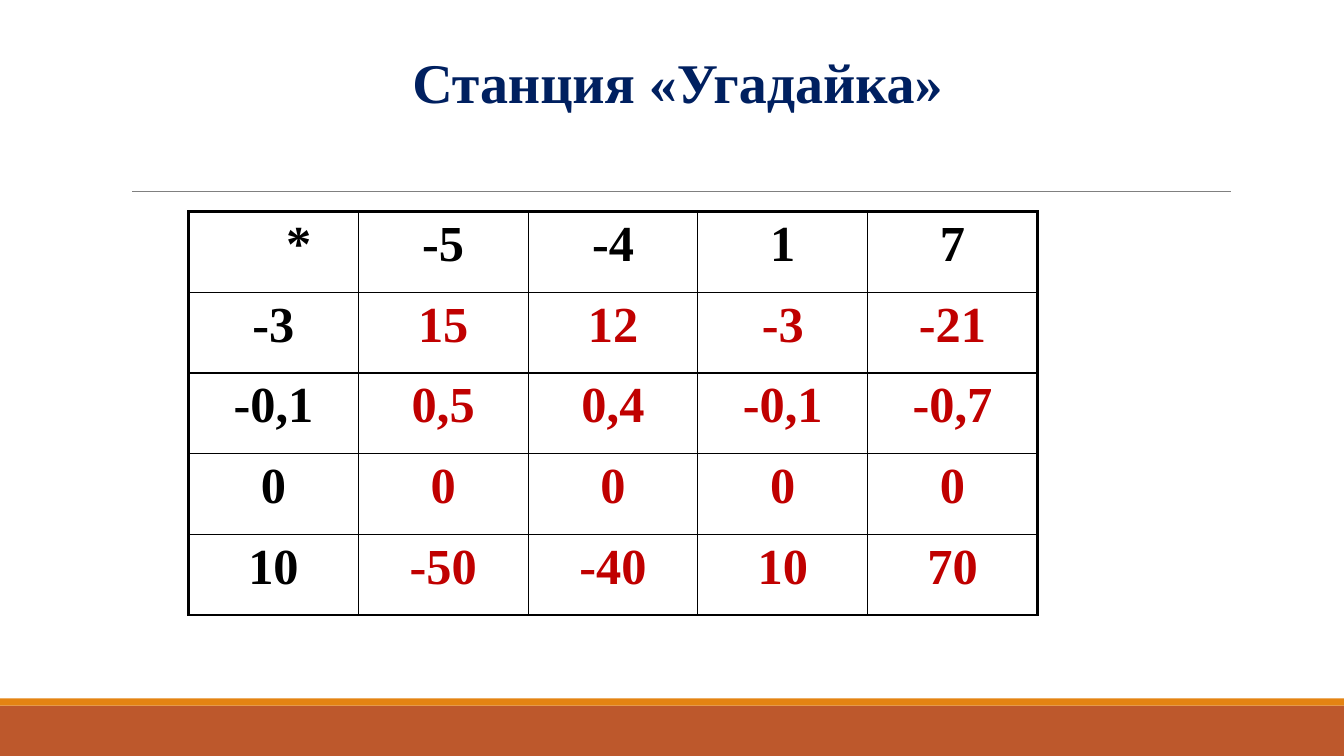
from lxml import etree
from pptx import Presentation
from pptx.dml.color import RGBColor
from pptx.enum.shapes import MSO_CONNECTOR, MSO_SHAPE
from pptx.enum.text import MSO_ANCHOR, MSO_AUTO_SIZE, PP_ALIGN
from pptx.oxml.ns import qn
from pptx.util import Pt

PX = 9144  # EMU per px, 100 px to the inch
SLIDE_WIDTH, SLIDE_HEIGHT = 1333, 750

RECTANGLE = MSO_SHAPE.RECTANGLE
STRAIGHT = MSO_CONNECTOR.STRAIGHT
CENTER = PP_ALIGN.CENTER
TOP = MSO_ANCHOR.TOP
NO_AUTO_SIZE = MSO_AUTO_SIZE.NONE

RUST = RGBColor(0xBD, 0x58, 0x2C)
ORANGE = RGBColor(0xE4, 0x83, 0x12)
GRAY = RGBColor(0x80, 0x80, 0x80)
NAVY = RGBColor(0x00, 0x20, 0x60)
BLACK = RGBColor(0x00, 0x00, 0x00)
RED = RGBColor(0xC0, 0x00, 0x00)

FONT = "Times New Roman"
INNER_BORDER, OUTER_BORDER = Pt(1), Pt(2.25)
STAR_INDENT = 50

PRODUCTS = [
    ["*", "-5", "-4", "1", "7"],
    ["-3", "15", "12", "-3", "-21"],
    ["-0,1", "0,5", "0,4", "-0,1", "-0,7"],
    ["0", "0", "0", "0", "0"],
    ["10", "-50", "-40", "10", "70"],
]


def px(*lengths):
    return [length * PX for length in lengths]


def write_centered(text_frame, text, size, color):
    text_frame.text = text
    paragraph = text_frame.paragraphs[0]
    paragraph.alignment = CENTER
    font = paragraph.runs[0].font
    font.name, font.size, font.bold = FONT, Pt(size), True
    font.color.rgb = color


def add_bar(slide, left, top, width, height, color):
    bar = slide.shapes.add_shape(RECTANGLE, *px(left, top, width, height))
    bar.shadow.inherit = False
    bar.fill.solid()
    bar.fill.fore_color.rgb = color
    bar.line.fill.background()


def add_footer(slide, left, top, width, height):
    stripe = 7
    add_bar(slide, left, top + stripe, width, height - stripe, RUST)
    add_bar(slide, left, top, width, stripe, ORANGE)


def add_rule(slide, left, top, width):
    rule = slide.shapes.add_connector(STRAIGHT, *px(left, top, left + width, top))
    rule.line.color.rgb = GRAY
    rule.line.width = Pt(0.5)
    etree.SubElement(rule._element.spPr, qn("a:effectLst"))


def add_title(slide, left, top, width, height):
    title = slide.shapes.title
    title.left, title.top, title.width, title.height = px(left, top, width, height)
    text_frame = title.text_frame
    text_frame.word_wrap = True
    text_frame.auto_size = NO_AUTO_SIZE
    text_frame.vertical_anchor = TOP
    text_frame.margin_top = 12 * PX
    write_centered(text_frame, "Станция «Угадайка»", 40, NAVY)


def set_borders(cell, widths):
    """Draw the left, right, top and bottom borders, given in that order."""
    properties = cell._tc.get_or_add_tcPr()
    for index, (side, width) in enumerate(zip("LRTB", widths)):
        line = etree.Element(qn(f"a:ln{side}"), w=str(int(width)))
        fill = etree.SubElement(line, qn("a:solidFill"))
        etree.SubElement(fill, qn("a:srgbClr"), val=str(BLACK))
        properties.insert(index, line)


def add_product_table(slide, left, top, width, height):
    count = len(PRODUCTS)
    last = count - 1
    frame = slide.shapes.add_table(count, count, *px(left, top, width, height))
    table = frame.table
    table.first_row = table.horz_banding = False
    for index in range(count):
        table.columns[index].width = width * PX // count
        table.rows[index].height = height * PX // count

    for row, values in enumerate(PRODUCTS):
        for column, value in enumerate(values):
            cell = table.cell(row, column)
            cell.fill.background()
            is_header = row == 0 or column == 0
            write_centered(cell.text_frame, value, 36, BLACK if is_header else RED)
            on_edge = (column == 0, column == last, row == 0, row == last)
            set_borders(cell, [OUTER_BORDER if edge else INNER_BORDER for edge in on_edge])

    # The multiplication sign sits right of the middle
    corner = table.cell(0, 0)
    corner.margin_left += STAR_INDENT * PX


def main():
    presentation = Presentation()
    presentation.slide_width, presentation.slide_height = px(SLIDE_WIDTH, SLIDE_HEIGHT)
    slide = presentation.slides.add_slide(presentation.slide_layouts[5])
    add_footer(slide, 0, 693, SLIDE_WIDTH, 57)
    add_rule(slide, 131, 190, 1090)
    add_product_table(slide, 187, 210, 842, 400)
    add_title(slide, 167, 35, 1010, 77)
    presentation.save("out.pptx")


if __name__ == "__main__":
    main()
